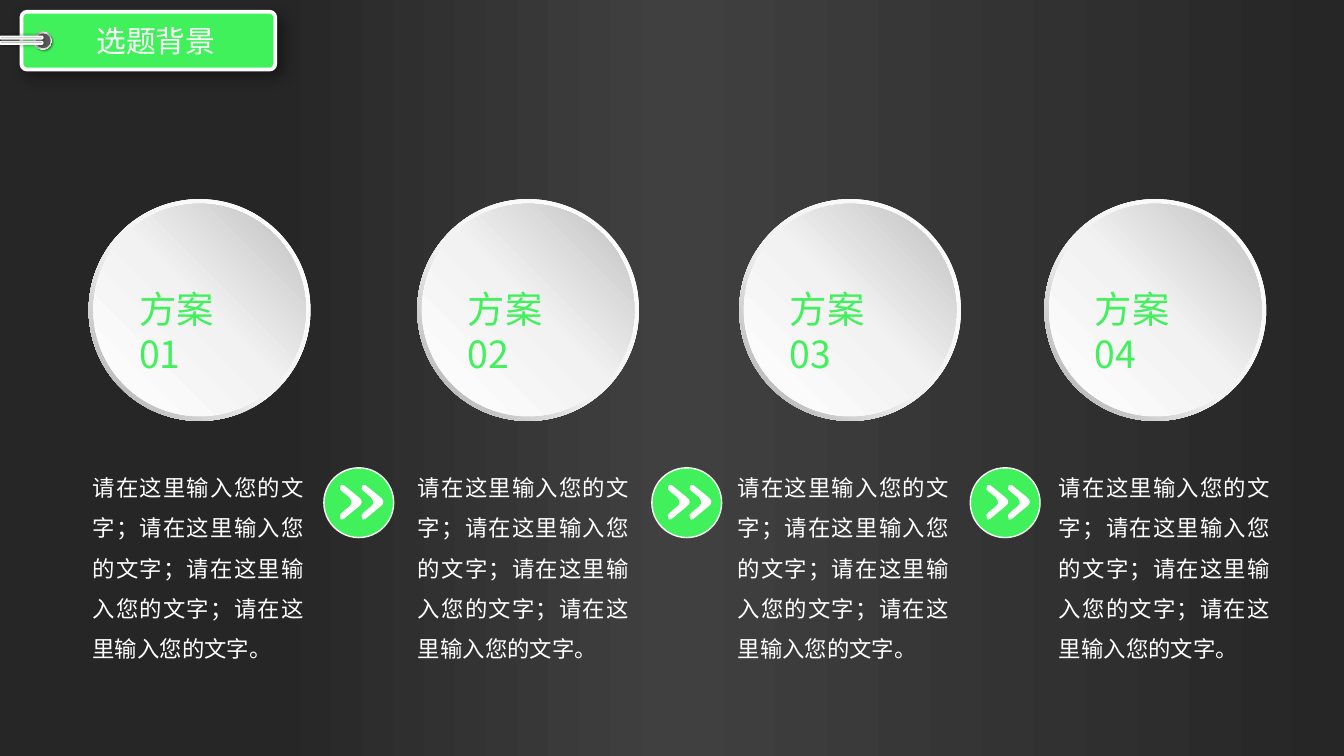
from lxml.etree import SubElement
from pptx import Presentation
from pptx.dml.color import RGBColor
from pptx.enum.shapes import MSO_SHAPE as Preset
from pptx.enum.text import MSO_ANCHOR as Anchor, MSO_AUTO_SIZE as AutoSize, PP_ALIGN as Align
from pptx.oxml.ns import qn
from pptx.util import Pt

# Content
TITLE = "选题背景"
BODY = "请在这里输入您的文字；" * 3 + "请在这里输入您的文字。"
# label, disc left, body left
PLANS = [
    ("方案01", 47.5, 44.6),
    ("方案02", 223.5, 218.9),
    ("方案03", 396, 390.2),
    ("方案04", 559.5, 562.3),
]
ARROW_LEFTS = [173.5, 349.2, 519.8]

# Chevron outline, in tenths of a point
CHEVRON = [
    (0, 29), (4, 9), (10, 5), (22, 8), (65, 43), (101, 72), (113, 84),
    (117, 97), (113, 110), (101, 122), (65, 151), (22, 187), (10, 192),
    (3, 187), (0, 166), (14, 151), (50, 122), (62, 108), (62, 92),
    (50, 72), (14, 43),
]


class Theme:
    font = "Noto Sans CJK SC"
    green, white, hole = "40F15B", "FFFFFF", "595959"
    title_size, label_size, body_size = 16, 20, 12
    # gradients: angle, then (position, colour) stops
    backdrop = 0, [(0, "262626"), (20, "262626"), (50, "404040"), (100, "262626")]
    rim = 135, [(0, "FFFFFF"), (55, "F2F2F2"), (100, "A6A6A6")]
    face = 315, [(0, "FFFFFF"), (51, "F2F2F2"), (100, "BFBFBF")]
    ring = 45, [(0, "FFFFFF"), (17, "A6A6A6"), (35, "F2F2F2"),
                (55, "A6A6A6"), (75, "F2F2F2"), (100, "A6A6A6")]
    wire = 90, [(0, "808080"), (23, "A6A6A6"), (52, "D9D9D9"),
                (74, "FFFFFF"), (100, "A6A6A6")]


def color(value):
    return RGBColor.from_string(value)


def paint_gradient(fill, owner, gradient):
    angle, stops = gradient
    fill.gradient()
    node = owner.find(".//" + qn("a:gradFill"))
    stop_list = node.find(qn("a:gsLst"))
    for old in list(stop_list):
        stop_list.remove(old)
    for position, value in stops:
        stop = SubElement(stop_list, qn("a:gs"), pos=str(position * 1000))
        SubElement(stop, qn("a:srgbClr"), val=value)
    node.find(qn("a:lin")).set("ang", str(angle * 60000))


def style(shape, fill, line=None, shadow=None):
    shape.shadow.inherit = False
    if isinstance(fill, str):
        shape.fill.solid()
        shape.fill.fore_color.rgb = color(fill)
    else:
        paint_gradient(shape.fill, shape.element, fill)
    if line:
        shape.line.color.rgb = color(Theme.white)
        shape.line.width = Pt(line)
    else:
        shape.line.fill.background()
    if shadow:
        blur, distance, angle = shadow
        effects = shape.element.spPr.find(qn("a:effectLst"))
        outer = SubElement(effects, qn("a:outerShdw"), blurRad=str(Pt(blur)),
                           dist=str(Pt(distance)), dir=str(angle * 60000),
                           algn="tl", rotWithShape="0")
        tint = SubElement(outer, qn("a:srgbClr"), val="000000")
        SubElement(tint, qn("a:alpha"), val="40000")


def add_preset(page, preset, left, top, width, height, fill, adjust=None, **look):
    shape = page.shapes.add_shape(preset, Pt(left), Pt(top), Pt(width), Pt(height))
    if adjust is not None:
        shape.adjustments[0] = adjust
    style(shape, fill, **look)


def write(box, place, text, size, ink, align, anchor=Anchor.TOP, spacing=None, inset=(7.2, 3.6)):
    box.left, box.top, box.width, box.height = (Pt(n) for n in place)
    frame = box.text_frame
    frame.word_wrap = True
    frame.auto_size = AutoSize.NONE
    frame.vertical_anchor = anchor
    frame.margin_left = frame.margin_right = Pt(inset[0])
    frame.margin_top = frame.margin_bottom = Pt(inset[1])
    para = frame.paragraphs[0]
    para.alignment = align
    if spacing:
        para.line_spacing = spacing
    span = para.add_run()
    span.text = text
    span.font.size = Pt(size)
    span.font.name = Theme.font
    span.font.color.rgb = color(ink)
    SubElement(span.font._element, qn("a:ea"), typeface=Theme.font)


def add_text(page, *args, **options):
    write(page.shapes.add_textbox(0, 0, 0, 0), *args, **options)


def add_tag(page):
    add_preset(page, Preset.ROUNDED_RECTANGLE, 11.5, 6.3, 136, 31, Theme.green,
               adjust=0.1, line=2, shadow=(8, 4, 45))
    add_preset(page, Preset.OVAL, 18, 17, 9.6, 9.6, Theme.ring, shadow=(1, 1, 45))
    add_preset(page, Preset.OVAL, 19.2, 17.9, 8, 8, Theme.hole)
    for top in (22.2, 19.4):
        add_preset(page, Preset.ROUNDED_RECTANGLE, 0, top, 23, 1.5, Theme.wire,
                   adjust=0.5, line=0.75, shadow=(2, 0, 0))
    title = page.shapes.title
    write(title, (19.4, 8.6, 128.2, 26.6), TITLE, Theme.title_size, Theme.white,
          Align.CENTER, Anchor.MIDDLE)
    title.element.getparent().append(title.element)  # bring in front of the tag


def add_plan(page, label, left, body_left):
    add_preset(page, Preset.DONUT, left, 106.7, 118.8, 118.8, Theme.rim, adjust=0.049)
    add_preset(page, Preset.OVAL, left + 2.5, 109.2, 113.8, 113.8, Theme.face)
    add_text(page, (left + 20, 149.8, 75, 31.7), label, Theme.label_size,
             Theme.green, Align.LEFT)
    add_text(page, (body_left, 244, 123.1, 114.5), BODY, Theme.body_size,
             Theme.white, Align.JUSTIFY, spacing=1.5, inset=(5, 2.9))


def add_arrow(page, left):
    add_preset(page, Preset.OVAL, left, 250.6, 37.4, 37.4, Theme.green, line=0.75)
    for offset in (20.2, 8.6):
        builder = page.shapes.build_freeform(*CHEVRON[0], scale=Pt(0.1))
        builder.add_line_segments(CHEVRON[1:], close=True)
        style(builder.convert_to_shape(Pt(left + offset), Pt(259.2)), Theme.white)


def main():
    deck = Presentation()
    deck.slide_width, deck.slide_height = Pt(720), Pt(405)
    page = deck.slides.add_slide(deck.slide_layouts[5])
    paint_gradient(page.background.fill, page.element, Theme.backdrop)
    add_tag(page)
    for plan in PLANS:
        add_plan(page, *plan)
    for left in ARROW_LEFTS:
        add_arrow(page, left)
    deck.save("out.pptx")


if __name__ == "__main__":
    main()
